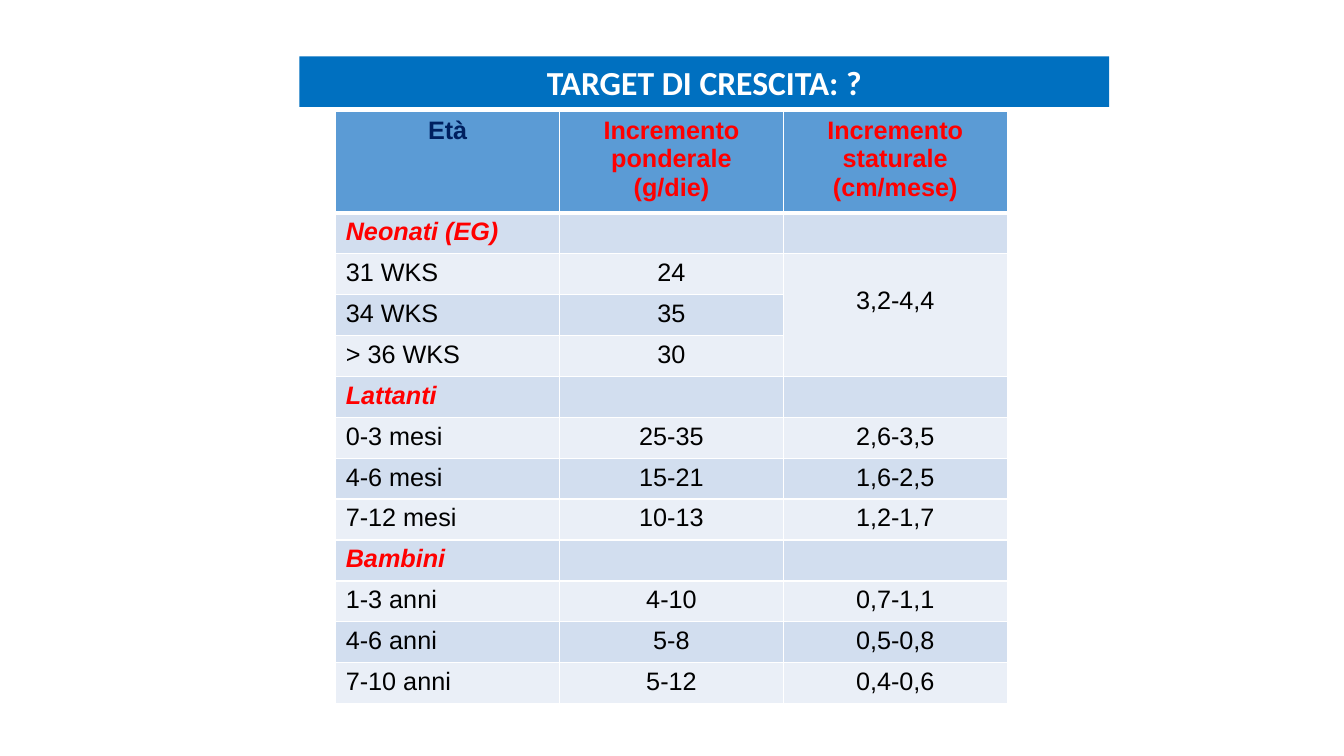
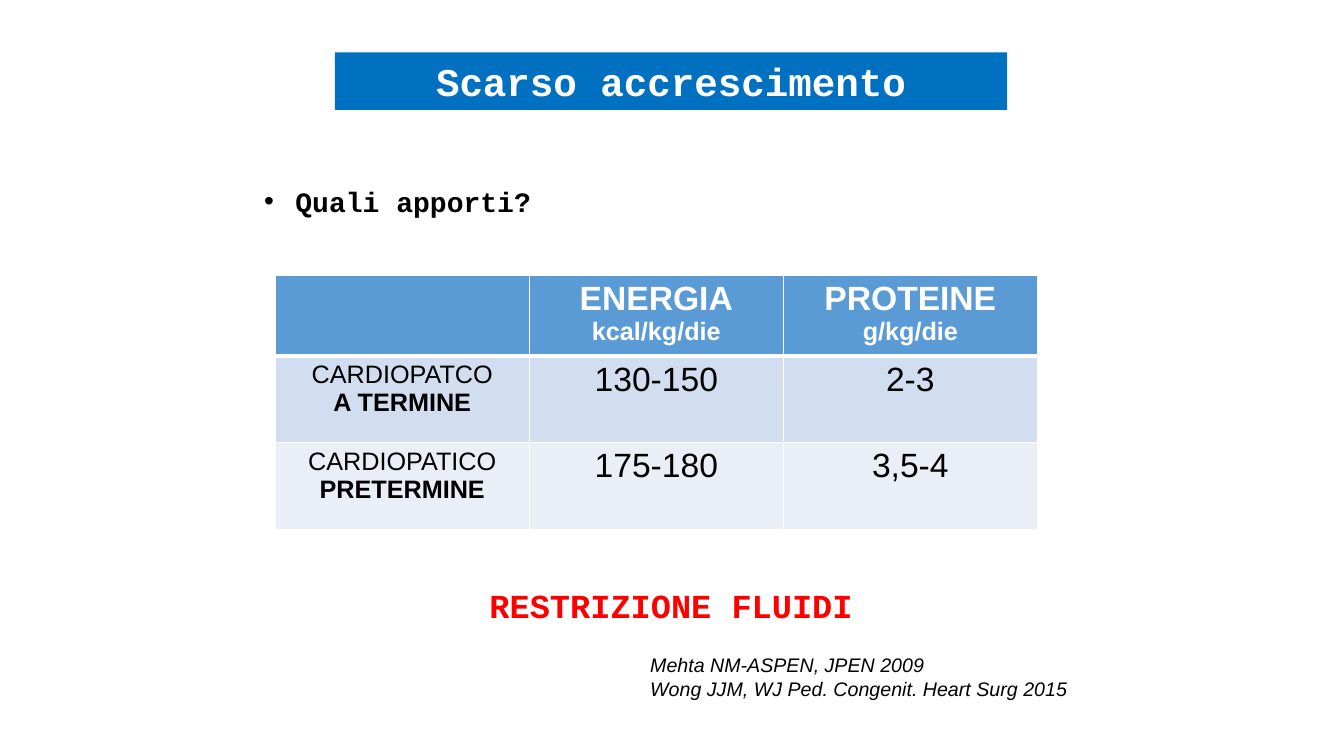
from lxml.etree import SubElement
from pptx import Presentation
from pptx.dml.color import RGBColor
from pptx.enum.text import MSO_ANCHOR, MSO_AUTO_SIZE, PP_ALIGN
from pptx.oxml.ns import qn
from pptx.util import Inches, Pt

WHITE = RGBColor(0xFF, 0xFF, 0xFF)
BLACK = RGBColor(0, 0, 0)
RED = RGBColor(0xFF, 0, 0)
NAVY = RGBColor(0x00, 0x20, 0x60)
BAND_BLUE = RGBColor(0x00, 0x70, 0xC0)
HEADER_BLUE = RGBColor(0x5B, 0x9B, 0xD5)
ROW_FILLS = RGBColor(0xD2, 0xDE, 0xEF), RGBColor(0xEA, 0xEF, 0xF7)
SANS, MONO = "Arial", "Courier New"
TITLE_ONLY, TITLE_AND_BODY = 5, 1

# Content
GROWTH_HEADER = ["Età", "Incremento ponderale\n(g/die)", "Incremento staturale\n(cm/mese)"]
GROWTH_GROUPS = {
    "Neonati (EG)": [("31 WKS", "24", "3,2-4,4"), ("34 WKS", "35", ""), ("> 36 WKS", "30", "")],
    "Lattanti": [("0-3 mesi", "25-35", "2,6-3,5"), ("4-6 mesi", "15-21", "1,6-2,5"),
                 ("7-12 mesi", "10-13", "1,2-1,7")],
    "Bambini": [("1-3 anni", "4-10", "0,7-1,1"), ("4-6 anni", "5-8", "0,5-0,8"),
                ("7-10 anni", "5-12", "0,4-0,6")],
}
INTAKE_ROWS = [
    ("", "ENERGIA\nkcal/kg/die", "PROTEINE\ng/kg/die"),
    ("CARDIOPATCO\nA TERMINE", "130-150", "2-3"),
    ("CARDIOPATICO\nPRETERMINE", "175-180", "3,5-4"),
]
REFERENCES = "Mehta NM-ASPEN, JPEN 2009\nWong JJM, WJ Ped. Congenit. Heart Surg 2015"


def style(p, size, color=BLACK, name=SANS, bold=False, italic=False, align=PP_ALIGN.CENTER):
    p.alignment = align
    for r in p.runs:
        f = r.font
        f.size, f.name, f.bold, f.italic = Pt(size), name, bold, italic
        f.color.rgb = color


def place(sp, left, top, width, height):
    sp.left, sp.top, sp.width, sp.height = map(Inches, (left, top, width, height))


def add_slide(prs, layout, title, box, size, font):
    """New slide with its title in the blue band."""
    s = prs.slides.add_slide(prs.slide_layouts[layout])
    sp = s.shapes.title
    place(sp, *box)
    sp.fill.solid()
    sp.fill.fore_color.rgb = BAND_BLUE
    tf = sp.text_frame
    tf.text = title
    tf.auto_size = MSO_AUTO_SIZE.NONE
    tf.vertical_anchor = MSO_ANCHOR.MIDDLE
    style(tf.paragraphs[0], size, WHITE, font, bold=True)
    return s


def set_borders(cell, row):
    """White rules, thicker under the header row."""
    tc_pr = cell._tc.get_or_add_tcPr()
    widths = {"L": 1, "R": 1, "T": 3 if row == 1 else 1, "B": 3 if row == 0 else 1}
    for side, width in widths.items():
        ln = SubElement(tc_pr, qn(f"a:ln{side}"), w=str(Pt(width)))
        SubElement(SubElement(ln, qn("a:solidFill")), qn("a:srgbClr"), val=str(WHITE))


def add_grid(s, rows, left, top, col_width, head_height, row_height):
    """Banded table holding the rows' text."""
    n_rows, n_cols = len(rows), len(rows[0])
    height = head_height + row_height * (n_rows - 1)
    table = s.shapes.add_table(n_rows, n_cols, Inches(left), Inches(top),
                               Inches(col_width * n_cols), Inches(height)).table
    for i, row in enumerate(rows):
        table.rows[i].height = Inches(row_height if i else head_height)
        for j, text in enumerate(row):
            cell = table.cell(i, j)
            set_borders(cell, i)
            cell.fill.solid()
            cell.fill.fore_color.rgb = ROW_FILLS[(i - 1) % 2] if i else HEADER_BLUE
            cell.text_frame.text = text
    return table


def add_text(s, text, box, line_spacing=1.0, **look):
    tf = s.shapes.add_textbox(*map(Inches, box)).text_frame
    tf.word_wrap = False
    tf.text = text
    for p in tf.paragraphs:
        p.line_spacing = line_spacing
        style(p, **look)


def growth_slide(prs):
    s = add_slide(prs, TITLE_ONLY, "TARGET DI CRESCITA: ?", (2.97, 0.56, 8.03, 0.5), 24, "Calibri")
    rows = [GROWTH_HEADER]
    for group, ages in GROWTH_GROUPS.items():
        rows += [(group, "", ""), *ages]
    table = add_grid(s, rows, 3.33, 1.11, 2.22, 1, 0.406)
    for i, row in enumerate(rows):
        for j in range(len(row)):
            is_group = row[0] in GROWTH_GROUPS
            color = NAVY if i == j == 0 else RED if i == 0 or is_group else BLACK
            align = PP_ALIGN.LEFT if i and j == 0 else PP_ALIGN.CENTER
            for p in table.cell(i, j).text_frame.paragraphs:
                style(p, 18, color, bold=i == 0 or is_group, italic=is_group, align=align)
    # One height value covers all the newborns
    newborn = table.cell(2, 2)
    newborn.merge(table.cell(4, 2))
    newborn.margin_top = Inches(0.33)


def intake_slide(prs):
    s = add_slide(prs, TITLE_AND_BODY, "Scarso accrescimento", (3.32, 0.52, 6.67, 0.57), 28, MONO)

    # Question
    body = s.placeholders[1]
    place(body, 2.02, 1.61, 8.74, 0.61)
    tf = body.text_frame
    tf.text = "Quali apporti?"
    tf.auto_size = MSO_AUTO_SIZE.NONE
    p = tf.paragraphs[0]
    p_pr = p._p.get_or_add_pPr()
    p_pr.set("marL", str(Inches(0.81)))
    p_pr.set("indent", str(Inches(-0.31)))
    SubElement(p_pr, qn("a:buFont"), typeface=SANS)
    SubElement(p_pr, qn("a:buChar"), char="•")
    p.line_spacing, p.space_before = 1.5, Pt(0)
    style(p, 20, name=MONO, bold=True, align=PP_ALIGN.LEFT)

    # Intake table
    table = add_grid(s, INTAKE_ROWS, 2.73, 2.73, 2.52, 0.8, 0.86)
    for i, row in enumerate(INTAKE_ROWS):
        for j in range(len(row)):
            for k, p in enumerate(table.cell(i, j).text_frame.paragraphs):
                size = 24 if j and k == 0 else 18
                style(p, size, BLACK if i else WHITE, bold=i == 0 or k == 1)

    # References and warning
    add_text(s, REFERENCES, (6.35, 6.43, 4.41, 0.57), size=14, italic=True, align=PP_ALIGN.LEFT)
    add_text(s, "RESTRIZIONE FLUIDI", (4.74, 5.35, 3.83, 0.91), 2.0,
             size=24, color=RED, name=MONO, bold=True)


def main():
    prs = Presentation()
    prs.slide_width, prs.slide_height = Inches(13.33), Inches(7.5)
    growth_slide(prs)
    intake_slide(prs)
    prs.save("out.pptx")


if __name__ == "__main__":
    main()
